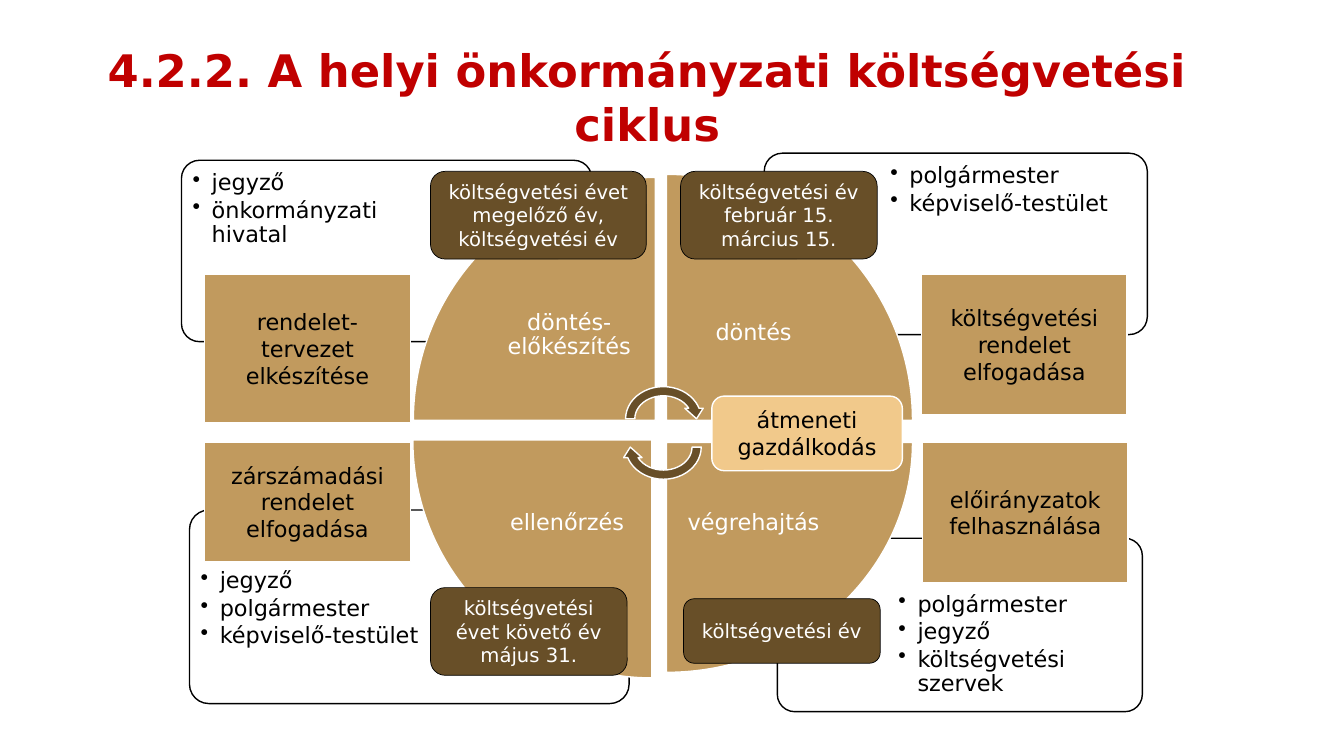
from dataclasses import dataclass

from lxml import etree
from pptx import Presentation
from pptx.dml.color import RGBColor
from pptx.enum.shapes import MSO_SHAPE
from pptx.enum.text import MSO_ANCHOR, MSO_AUTO_SIZE, PP_ALIGN
from pptx.oxml.ns import qn
from pptx.shapes.base import BaseShape
from pptx.slide import Slide
from pptx.text.text import TextFrame
from pptx.util import Inches, Pt

ROUNDED = MSO_SHAPE.ROUNDED_RECTANGLE
RECTANGLE = MSO_SHAPE.RECTANGLE
WEDGE = MSO_SHAPE.PIE_WEDGE
CYCLE_ARROW = MSO_SHAPE.CIRCULAR_ARROW
CENTER = PP_ALIGN.CENTER
LEFT = PP_ALIGN.LEFT
MIDDLE = MSO_ANCHOR.MIDDLE
TOP = MSO_ANCHOR.TOP
NO_FIT = MSO_AUTO_SIZE.NONE

Box = tuple[float, float, float, float]


@dataclass(frozen=True)
class Theme:
    font: str = "DejaVu Sans"
    red: str = "C00000"
    tan: str = "C19A5E"
    brown: str = "684F28"
    peach: str = "F1C98B"
    black: str = "000000"
    white: str = "FFFFFF"
    title_size: float = 32
    body_size: float = 16
    date_size: float = 14
    line: float = 1
    thin_line: float = 0.5


THEME = Theme()


@dataclass(frozen=True)
class ActorPanel:
    frame: Box
    text_box: Box
    actors: tuple[str, ...]


@dataclass(frozen=True)
class Phase:
    wedge: Box
    label_box: Box
    label: str
    rotation: int


@dataclass(frozen=True)
class Card:
    box: Box
    lines: tuple[str, ...]


ACTOR_PANELS = (
    ActorPanel((7.71, 5.34, 3.62, 1.72), (8.84, 5.81, 2.46, 1.22),
               ("polgármester", "jegyző", "költségvetési szervek")),
    ActorPanel((1.88, 5.06, 4.36, 1.92), (1.92, 5.58, 2.97, 1.36),
               ("jegyző", "polgármester", "képviselő-testület")),
    ActorPanel((7.58, 1.52, 3.8, 1.8), (8.76, 1.56, 2.58, 1.27),
               ("polgármester", "képviselő-testület")),
    ActorPanel((1.8, 1.59, 4.07, 1.8), (1.84, 1.63, 2.77, 1.27),
               ("jegyző", "önkormányzati hivatal")),
)
PHASES = (
    Phase((4.1, 1.76, 2.4, 2.41), (4.8, 2.47, 1.69, 1.71), "döntés- előkészítés", 0),
    Phase((6.61, 1.73, 2.44, 2.44), (6.61, 2.44, 1.73, 1.73), "döntés", 90),
    Phase((6.61, 4.39, 2.44, 2.28), (6.61, 4.39, 1.73, 1.61), "végrehajtás", 180),
    Phase((4.1, 4.36, 2.36, 2.37), (4.79, 4.36, 1.67, 1.67), "ellenőrzés", 270),
)
DATES = (
    Card((6.75, 1.7, 1.95, 0.87), ("költségvetési év február 15.", "március 15.")),
    Card((4.27, 1.7, 2.14, 0.87), ("költségvetési évet megelőző év, költségvetési év",)),
    Card((6.78, 5.94, 1.95, 0.64), ("költségvetési év",)),
    Card((4.27, 5.83, 1.95, 0.87), ("költségvetési évet követő év május 31.",)),
)
INTERIM = Card((7.06, 3.93, 1.89, 0.74), ("átmeneti gazdálkodás",))
TASKS = (
    Card((2.03, 2.72, 2.04, 1.47), ("rendelet-tervezet elkészítése",)),
    Card((9.14, 2.72, 2.04, 1.39), ("költségvetési rendelet elfogadása",)),
    Card((9.15, 4.39, 2.04, 1.39), ("előirányzatok felhasználása",)),
    Card((2.03, 4.39, 2.04, 1.18), ("zárszámadási rendelet elfogadása",)),
)
ARROWS = (((6.16, 3.79, 0.84, 0.73), 0), ((6.16, 4.07, 0.84, 0.73), 180))


def write(frame: TextFrame, lines: tuple[str, ...], size: float, color: str,
          bold: bool = False, bullets: bool = False, spacing: float = 1) -> None:
    frame.word_wrap = True
    frame.auto_size = NO_FIT
    frame.vertical_anchor = TOP if bullets else MIDDLE
    for index, line in enumerate(lines):
        paragraph = frame.paragraphs[0] if index == 0 else frame.add_paragraph()
        paragraph.alignment = LEFT if bullets else CENTER
        paragraph.line_spacing = spacing
        if bullets:
            paragraph.level = 1
            paragraph.space_after = Pt(2.4)
            properties = paragraph._p.get_or_add_pPr()
            properties.set("marL", str(Inches(0.19)))
            properties.set("indent", str(Inches(-0.19)))
            etree.SubElement(properties, qn("a:buChar")).set("char", "•")
        run = paragraph.add_run()
        run.text = line
        run.font.name = THEME.font
        run.font.size = Pt(size)
        run.font.bold = bold
        run.font.color.rgb = RGBColor.from_string(color)


def add_figure(slide: Slide, kind: MSO_SHAPE, box: Box, fill: str | None, line: str,
               width: float = THEME.line, rotation: int = 0) -> BaseShape:
    figure = slide.shapes.add_shape(kind, *map(Inches, box))
    figure.shadow.inherit = False
    figure.rotation = rotation
    if fill is None:
        figure.fill.background()
    else:
        figure.fill.solid()
        figure.fill.fore_color.rgb = RGBColor.from_string(fill)
    figure.line.color.rgb = RGBColor.from_string(line)
    figure.line.width = Pt(width)
    return figure


def add_label(slide: Slide, box: Box, lines: tuple[str, ...], color: str,
              inset: float, bullets: bool = False) -> None:
    frame = slide.shapes.add_textbox(*map(Inches, box)).text_frame
    frame.margin_left = frame.margin_right = Inches(inset)
    frame.margin_top = frame.margin_bottom = Inches(inset)
    write(frame, lines, THEME.body_size, color, bullets=bullets, spacing=0.9)


def add_title(slide: Slide) -> None:
    title = slide.shapes.title
    title.left, title.top, title.width, title.height = map(Inches, (0.83, 0.33, 11.18, 1.25))
    write(title.text_frame, ("4.2.2. A helyi önkormányzati költségvetési ciklus",),
          THEME.title_size, THEME.red, bold=True)


def add_card(slide: Slide, card: Card, kind: MSO_SHAPE, fill: str, line: str,
             color: str, size: float, width: float = THEME.line) -> None:
    figure = add_figure(slide, kind, card.box, fill, line, width)
    write(figure.text_frame, card.lines, size, color)


def main() -> None:
    deck = Presentation()
    deck.slide_width, deck.slide_height = Inches(13.33), Inches(7.5)
    slide = deck.slides.add_slide(deck.slide_layouts.get_by_name("Title Only"))
    add_title(slide)
    for panel in ACTOR_PANELS:
        outline = add_figure(slide, ROUNDED, panel.frame, None, THEME.black)
        outline.adjustments[0] = 0.1
        add_label(slide, panel.text_box, panel.actors, THEME.black, 0.07, bullets=True)
    for phase in PHASES:
        add_figure(slide, WEDGE, phase.wedge, THEME.tan, THEME.white, rotation=phase.rotation)
        add_label(slide, phase.label_box, (phase.label,), THEME.white, 0.12)
    for box, rotation in ARROWS:
        add_figure(slide, CYCLE_ARROW, box, THEME.brown, THEME.white, rotation=rotation)
    for date in DATES:
        add_card(slide, date, ROUNDED, THEME.brown, THEME.black, THEME.white,
                 THEME.date_size, THEME.thin_line)
    add_card(slide, INTERIM, ROUNDED, THEME.peach, THEME.white, THEME.black, THEME.body_size)
    for task in TASKS:
        add_card(slide, task, RECTANGLE, THEME.tan, THEME.white, THEME.black, THEME.body_size)
    deck.save("out.pptx")


if __name__ == "__main__":
    main()
